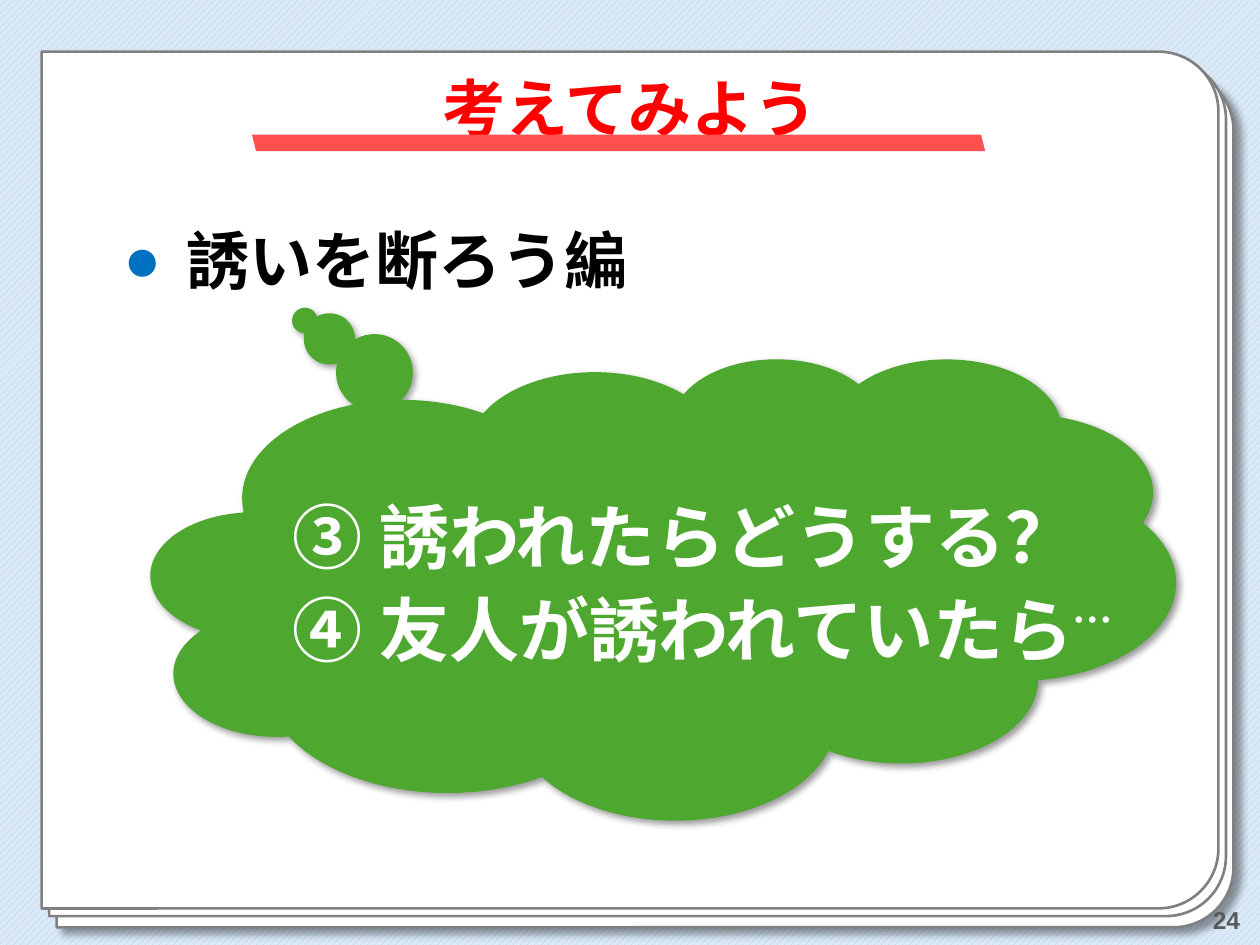
from lxml.etree import SubElement
from pptx import Presentation
from pptx.dml.color import RGBColor
from pptx.enum.dml import MSO_PATTERN
from pptx.enum.shapes import MSO_SHAPE
from pptx.enum.text import MSO_ANCHOR, MSO_AUTO_SIZE, PP_ALIGN
from pptx.oxml import parse_xml
from pptx.oxml.ns import nsdecls, qn
from pptx.util import Pt

JAPANESE = "Noto Sans CJK JP"
color = RGBColor.from_string


def add_span(para, text, size, hue, name=JAPANESE):
    span = para.add_run()
    span.text = text
    span.font.size = Pt(size)
    span.font.bold = True
    span.font.color.rgb = color(hue)
    span.font.name = name
    SubElement(span.font._element, qn("a:ea"), typeface=JAPANESE)
    return span


def add_shadow(shape, distance):
    shape._element.spPr.remove(shape._element.spPr.find(qn("a:effectLst")))
    shape._element.spPr.append(parse_xml(
        f'<a:effectLst {nsdecls("a")}><a:outerShdw blurRad="{Pt(4)}" dist="{Pt(distance)}" '
        'dir="2700000" algn="tl" rotWithShape="0"><a:srgbClr val="000000">'
        '<a:alpha val="40000"/></a:srgbClr></a:outerShdw></a:effectLst>'))


deck = Presentation()
deck.slide_width, deck.slide_height = Pt(720), Pt(540)
page = deck.slides.add_slide(deck.slide_layouts[5])

backdrop = page.background.fill
backdrop.patterned()
backdrop.pattern = MSO_PATTERN.WIDE_UPWARD_DIAGONAL
backdrop.fore_color.rgb = color("A6CAEC")
backdrop.back_color.rgb = color("DCEAF7")

sheets = []
for left, top in [(123.8, -51.1), (119.5, -57.5), (115.2, -61.9)]:
    sheet = page.shapes.add_shape(MSO_SHAPE.ROUND_2_SAME_RECTANGLE,
                                  Pt(left), Pt(top), Pt(489.6), Pt(672.5))
    sheet.rotation = 90
    sheet.adjustments[0] = 0.07
    sheet.shadow.inherit = False
    sheet.fill.solid()
    sheet.fill.fore_color.rgb = color("FFFFFF")
    sheet.line.color.rgb = color("808080")
    sheet.line.width = Pt(1.5)
    sheets.append(sheet)
add_shadow(sheets[0], 5)

number_box = page.shapes.add_textbox(Pt(553.7), Pt(511.2), Pt(162), Pt(28.8))
number_box.text_frame.word_wrap = True
number_box.text_frame.vertical_anchor = MSO_ANCHOR.MIDDLE
para = number_box.text_frame.paragraphs[0]
para.alignment = PP_ALIGN.RIGHT
add_span(para, "24", 14, "595959", "Arial")

title = page.shapes.title
title.left, title.top, title.width, title.height = Pt(49), Pt(25.2), Pt(622), Pt(77.8)
title.text_frame.vertical_anchor = MSO_ANCHOR.MIDDLE
para = title.text_frame.paragraphs[0]
para.alignment = PP_ALIGN.CENTER
para.line_spacing = 0.9
add_span(para, "考えてみよう", 36, "FF0000", "Arial")
title.element.getparent().append(title.element)

cloud = page.shapes.add_shape(MSO_SHAPE.CLOUD_CALLOUT, Pt(86.4), Pt(204.5), Pt(585.4), Pt(263.5))
cloud.adjustments[0] = -0.35
cloud.adjustments[1] = -0.581
cloud.shadow.inherit = False
cloud.fill.solid()
cloud.fill.fore_color.rgb = color("4EA72E")
cloud.line.fill.background()
add_shadow(cloud, 3)
frame = cloud.text_frame
frame.word_wrap = False
frame.vertical_anchor = MSO_ANCHOR.MIDDLE
frame.margin_left = frame.margin_right = frame.margin_top = frame.margin_bottom = 0
for index, question in enumerate(["誘われたらどうする？", "友人が誘われていたら"]):
    para = frame.add_paragraph() if index else frame.paragraphs[0]
    para.alignment = PP_ALIGN.LEFT
    para.line_spacing = 1.1
    properties = para._p.get_or_add_pPr()
    properties.set("marL", str(Pt(49.7)))
    properties.set("indent", str(-Pt(49.7)))
    SubElement(properties, qn("a:buFont"), typeface="+mj-ea")
    SubElement(properties, qn("a:buAutoNum"), type="circleNumDbPlain", startAt="3")
    add_span(para, question, 40, "FFFFFF")
ellipsis = add_span(para, "…", 40, "FFFFFF", "Arial")
ellipsis.font._element.set("baseline", "30000")

topic_box = page.shapes.add_textbox(Pt(63.4), Pt(123.1), Pt(305.3), Pt(51.1))
topic_box.text_frame.word_wrap = False
topic_box.text_frame.auto_size = MSO_AUTO_SIZE.SHAPE_TO_FIT_TEXT
para = topic_box.text_frame.paragraphs[0]
para.space_after = Pt(30)
properties = para._p.get_or_add_pPr()
properties.set("marL", str(Pt(36)))
properties.set("indent", str(-Pt(36)))
SubElement(SubElement(properties, qn("a:buClr")), qn("a:srgbClr"), val="0070C0")
SubElement(properties, qn("a:buFont"), typeface="Arial")
SubElement(properties, qn("a:buChar"), char="●")
add_span(para, "誘いを断ろう編", 36, "000000")

underline = page.shapes.add_shape(MSO_SHAPE.PARALLELOGRAM, Pt(144), Pt(77), Pt(419), Pt(9.4))
underline._element.spPr.find(qn("a:xfrm")).set("flipH", "1")
underline.shadow.inherit = False
underline.fill.solid()
underline.fill.fore_color.rgb = color("FF5050")
underline.line.fill.background()

deck.save("out.pptx")
